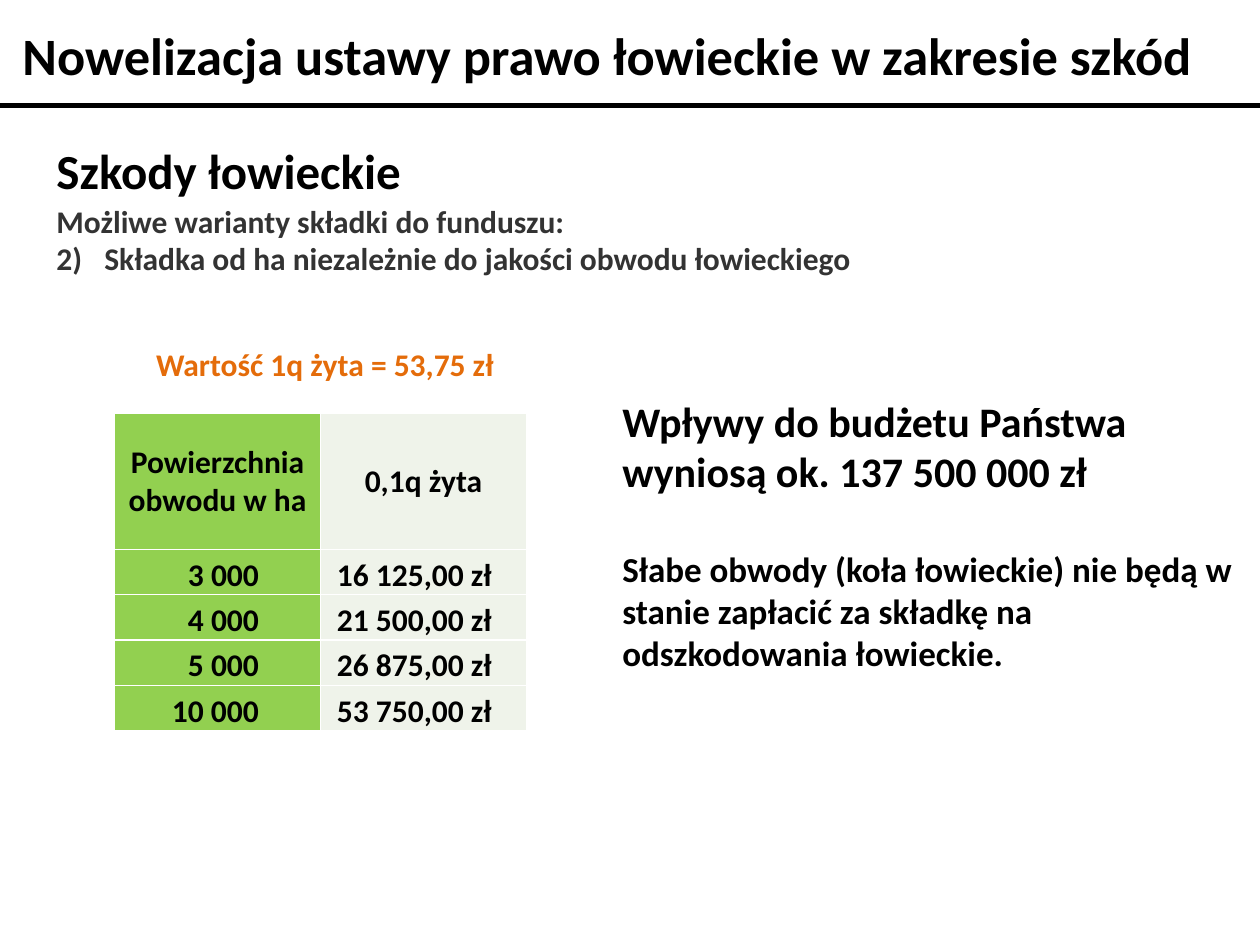
from lxml import etree
from pptx import Presentation
from pptx.dml.color import RGBColor
from pptx.enum.shapes import MSO_CONNECTOR
from pptx.enum.text import MSO_ANCHOR, MSO_AUTO_SIZE, PP_ALIGN
from pptx.oxml.ns import qn
from pptx.util import Inches, Pt

STRAIGHT = MSO_CONNECTOR.STRAIGHT
MIDDLE, BOTTOM = MSO_ANCHOR.MIDDLE, MSO_ANCHOR.BOTTOM
LEFT, CENTER, RIGHT = PP_ALIGN.LEFT, PP_ALIGN.CENTER, PP_ALIGN.RIGHT
FIT = MSO_AUTO_SIZE.SHAPE_TO_FIT_TEXT

FONT = "Calibri"
COLORS = {
    "text": "000000",
    "muted": "333333",
    "accent": "E46C0A",
    "area": "92D050",
    "fee": "EFF3EA",
    "border": "FFFFFF",
}
HEADERS = ("Powierzchnia obwodu w ha", "0,1q żyta")
FEES = [
    ("3 000", "16 125,00 zł"),
    ("4 000", "21 500,00 zł"),
    ("5 000", "26 875,00 zł"),
    ("10 000", "53 750,00 zł"),
]


def rgb(name):
    return RGBColor.from_string(COLORS[name])


def write(p, text, size, color="text"):
    r = p.add_run()
    r.text = text
    for key, value in {"name": FONT, "size": Pt(size), "bold": True}.items():
        setattr(r.font, key, value)
    r.font.color.rgb = rgb(color)


def add_text(slide, box, paragraphs, color="text", wrap=True):
    """Add a text box; paragraphs holds (text, size) pairs."""
    tf = slide.shapes.add_textbox(*map(Inches, box)).text_frame
    tf.word_wrap = wrap
    tf.auto_size = FIT
    for i, (text, size) in enumerate(paragraphs):
        p = tf.add_paragraph() if i else tf.paragraphs[0]
        write(p, text, size, color)
    return tf


def number_paragraph(p, start, indent):
    pPr = p._p.get_or_add_pPr()
    pPr.set("marL", str(Inches(indent)))
    pPr.set("indent", str(-Inches(indent)))
    etree.SubElement(pPr, qn("a:buFont"), typeface="+mj-lt")
    etree.SubElement(pPr, qn("a:buAutoNum"), type="arabicParenR", startAt=str(start))


def add_rule(slide, y, width):
    line = slide.shapes.add_connector(
        STRAIGHT, Inches(0), Inches(y), Inches(10), Inches(y))
    line.line.color.rgb = rgb("text")
    line.line.width = Pt(width)
    etree.SubElement(line._element.spPr, qn("a:effectLst"))


def add_borders(cell):
    tcPr = cell._tc.get_or_add_tcPr()
    for side in ("lnL", "lnR", "lnT", "lnB"):
        ln = etree.SubElement(tcPr, qn(f"a:{side}"), w=str(Pt(1)))
        fill = etree.SubElement(ln, qn("a:solidFill"))
        etree.SubElement(fill, qn("a:srgbClr"), val=COLORS["border"])


def fill_cell(cell, text, fill, align, anchor, left=0.01, right=0.01):
    add_borders(cell)
    cell.fill.solid()
    cell.fill.fore_color.rgb = rgb(fill)
    layout = {
        "margin_left": Inches(left),
        "margin_right": Inches(right),
        "margin_top": Inches(0.01),
        "margin_bottom": 0,
        "vertical_anchor": anchor,
    }
    for key, value in layout.items():
        setattr(cell, key, value)
    p = cell.text_frame.paragraphs[0]
    p.alignment = align
    write(p, text, 18)


def add_fee_table(slide):
    box = map(Inches, (0.91, 3.28, 3.27, 2.52))
    table = slide.shapes.add_table(len(FEES) + 1, len(HEADERS), *box).table
    for i, row in enumerate(table.rows):
        row.height = Inches(0.36 if i else 1.08)
    for col, (text, fill) in enumerate(zip(HEADERS, ("area", "fee"))):
        fill_cell(table.cell(0, col), text, fill, CENTER, MIDDLE)
    for i, (area, fee) in enumerate(FEES, start=1):
        fill_cell(table.cell(i, 0), area, "area", RIGHT, BOTTOM, right=0.49)
        fill_cell(table.cell(i, 1), fee, "fee", LEFT, BOTTOM, left=0.13)


def main():
    prs = Presentation()
    prs.slide_width, prs.slide_height = Inches(10), Inches(7.5)
    slide = prs.slides.add_slide(prs.slide_layouts[6])

    # Title and rule
    add_rule(slide, 0.84, 2.75)
    add_text(slide, (0.08, 0.13, 9.88, 0.61),
             [("Nowelizacja ustawy prawo łowieckie w zakresie szkód", 30)])

    # Section heading and variant
    add_text(slide, (0.35, 1.07, 2.97, 0.57), [("Szkody łowieckie", 28)], wrap=False)
    tf = add_text(slide, (0.35, 1.55, 9.13, 0.71), [
        ("Możliwe warianty składki do funduszu:", 18),
        ("Składka od ha niezależnie do jakości obwodu łowieckiego", 18),
    ], "muted")
    number_paragraph(tf.paragraphs[1], start=2, indent=0.38)

    # Fee table with the rye price above
    add_fee_table(slide)
    add_text(slide, (1.14, 2.69, 3.3, 0.4),
             [("Wartość 1q żyta = 53,75 zł", 18)], "accent", wrap=False)

    # Conclusions
    tf = add_text(slide, (4.84, 3.09, 5.12, 2.32), [
        ("Wpływy do budżetu Państwa wyniosą ok. 137 500 000 zł", 24),
        ("Słabe obwody (koła łowieckie) nie będą w stanie zapłacić "
         "za składkę na odszkodowania łowieckie.", 20),
    ])
    tf.paragraphs[1].space_before = Pt(29)

    prs.save("out.pptx")


if __name__ == "__main__":
    main()
